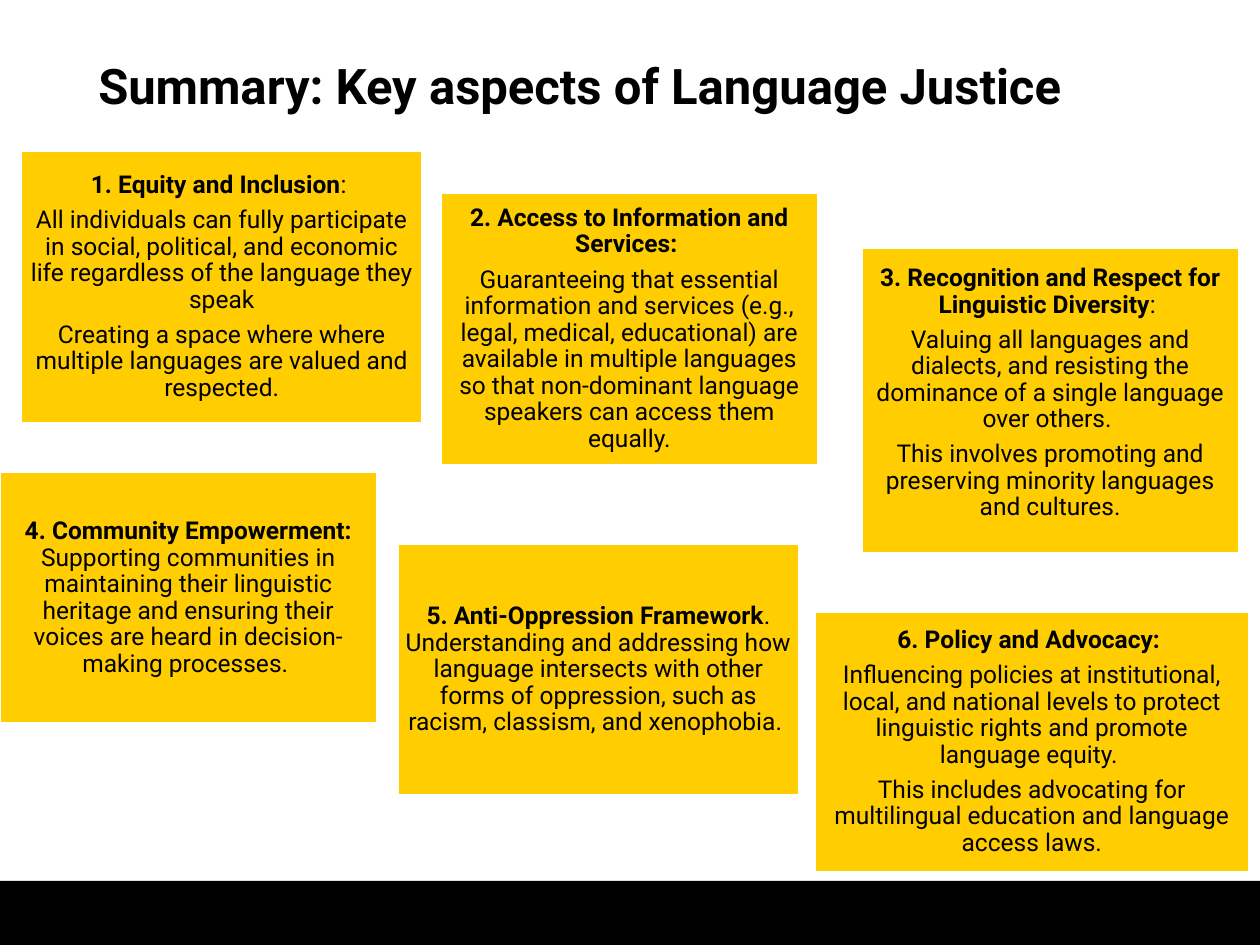
"""Build the Language Justice summary slide with its six key-aspect cards."""
import pptx
import pptx.util
import pptx.dml.color
import pptx.enum.shapes
import pptx.enum.text

Inches, Pt = pptx.util.Inches, pptx.util.Pt
RGB = pptx.dml.color.RGBColor.from_string
RECTANGLE = pptx.enum.shapes.MSO_SHAPE.RECTANGLE
ALIGN = pptx.enum.text.PP_ALIGN

TITLE = "Summary: Key aspects of Language Justice"
ASPECTS = [
    {"at": (0.17, 1.2, 3.18, 2.16), "inset": 0.05, "text": [
        ("1. Equity and Inclusion", ": "),
        ("", "All individuals can fully participate in social, political, and economic life "
             "regardless of the language they speak"),
        ("", "Creating a space where where multiple languages are valued and respected.")]},
    {"at": (3.5, 1.53, 2.99, 2.16), "inset": 0.05, "text": [
        ("2. Access to Information and Services: ", ""),
        ("", "Guaranteeing that essential information and services (e.g., legal, medical, "
             "educational) are available in multiple languages so that non-dominant language "
             "speakers can access them equally.")]},
    {"at": (6.84, 1.97, 2.99, 2.42), "inset": 0.07, "lift": 0.12, "text": [
        ("3. Recognition and Respect for Linguistic Diversity", ": "),
        ("", "Valuing all languages and dialects, and resisting the dominance of a single "
             "language over others. "),
        ("", "This involves promoting and preserving minority languages and cultures.")]},
    {"at": (0, 3.75, 2.99, 1.99), "inset": 0.07, "text": [
        ("4. Community Empowerment: ",
         "Supporting communities in maintaining their linguistic heritage and ensuring their "
         "voices are heard in decision-making processes. ")]},
    {"at": (3.16, 4.32, 3.18, 1.99), "inset": 0.06, "text": [
        ("5. Anti-Oppression Framework",
         ". Understanding and addressing how language intersects with other forms of "
         "oppression, such as racism, classism, and xenophobia. ")]},
    {"at": (6.47, 4.86, 3.44, 2.06), "inset": 0.09, "text": [
        ("6. Policy and Advocacy: ", ""),
        ("", "Influencing policies at institutional, local, and national levels to protect "
             "linguistic rights and promote language equity. "),
        ("", "This includes advocating for multilingual education and language access laws.")]},
]
THEME = {
    "font": "Roboto", "ink": "000000", "card": "FFCD00", "edge": "FFFFFF", "bar": "000000",
    "title_size": 28, "card_size": 14, "line_spacing": 0.9, "space_after": 0.35,
}


def set_all(target, values):
    for name, value in values.items():
        setattr(target, name, value)


def place(part, box):
    set_all(part, dict(zip(("left", "top", "width", "height"), map(Inches, box))))


def set_frame(frame, inset, lift=0):
    set_all(frame, {
        "word_wrap": True,
        "auto_size": pptx.enum.text.MSO_AUTO_SIZE.NONE,
        "vertical_anchor": pptx.enum.text.MSO_ANCHOR.MIDDLE,
        "margin_left": Inches(inset), "margin_right": Inches(inset),
        "margin_top": Inches(inset), "margin_bottom": Inches(inset + lift),
    })


def add_run(paragraph, words, size, bold):
    run = paragraph.add_run()
    run.text = words
    set_all(run.font, {"name": THEME["font"], "size": Pt(size), "bold": bold})
    run.font.color.rgb = RGB(THEME["ink"])


def add_block(slide, box, fill):
    block = slide.shapes.add_shape(RECTANGLE, *map(Inches, box))
    block.shadow.inherit = False
    block.fill.solid()
    block.fill.fore_color.rgb = RGB(fill)
    block.line.fill.background()
    return block


def add_title(slide):
    title = slide.shapes.title
    place(title, (0.78, 0.23, 8.44, 0.95))
    set_frame(title.text_frame, 0)
    heading = title.text_frame.paragraphs[0]
    set_all(heading, {"alignment": ALIGN.LEFT, "line_spacing": THEME["line_spacing"]})
    add_run(heading, TITLE, THEME["title_size"], True)


def add_aspect(slide, aspect):
    card = add_block(slide, aspect["at"], THEME["card"])
    card.line.color.rgb = RGB(THEME["edge"])
    card.line.width = Pt(1)
    frame = card.text_frame
    set_frame(frame, aspect["inset"], aspect.get("lift", 0))
    size = THEME["card_size"]
    for index, (heading, detail) in enumerate(aspect["text"]):
        paragraph = frame.add_paragraph() if index else frame.paragraphs[0]
        set_all(paragraph, {
            "alignment": ALIGN.CENTER,
            "line_spacing": THEME["line_spacing"],
            "space_after": Pt(size * THEME["space_after"]),
        })
        for words, bold in ((heading, True), (detail, False)):
            if words:
                add_run(paragraph, words, size, bold)


def main():
    deck = pptx.Presentation()
    set_all(deck, {"slide_width": Inches(10), "slide_height": Inches(7.5)})
    slide = deck.slides.add_slide(deck.slide_layouts.get_by_name("Title Only"))
    add_block(slide, (0, 6.99, 10, 0.51), THEME["bar"])
    add_title(slide)
    for aspect in ASPECTS:
        add_aspect(slide, aspect)
    deck.save("out.pptx")


if __name__ == "__main__":
    main()
